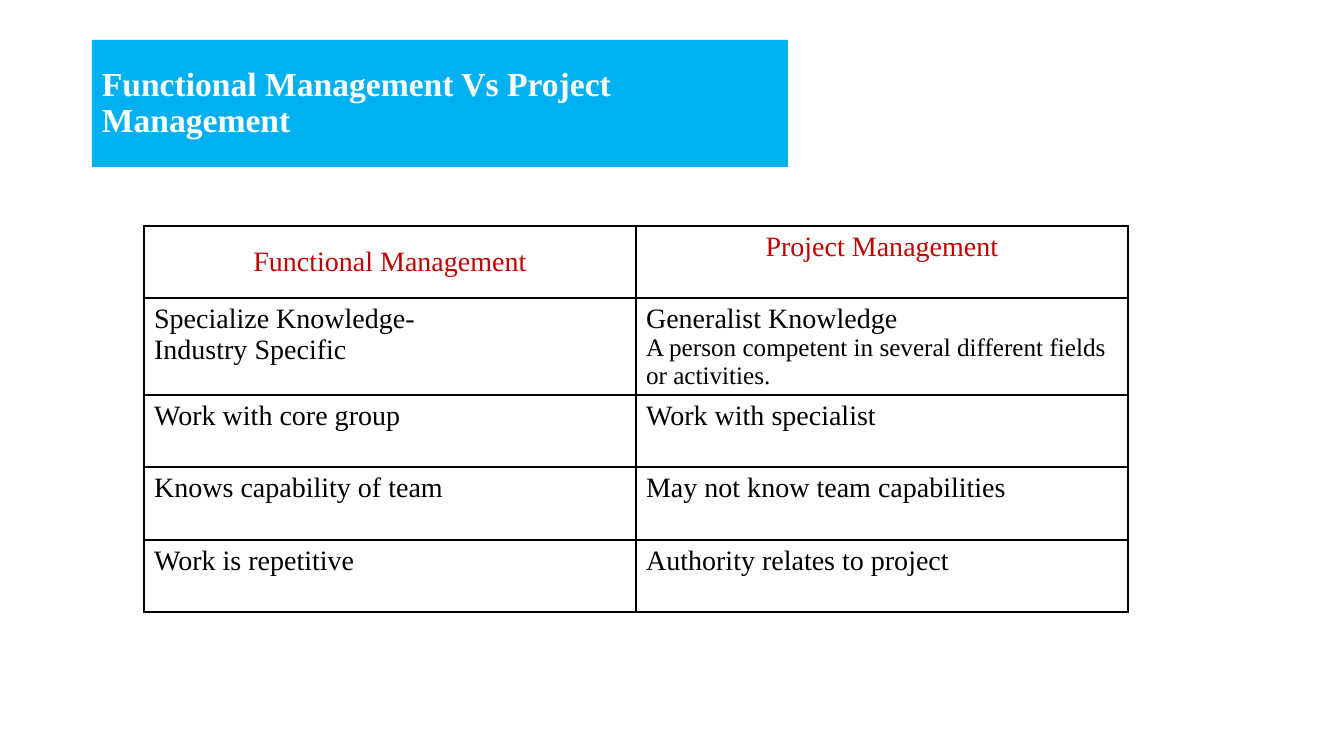
from lxml import etree
from pptx import Presentation
from pptx import util as u
from pptx.dml.color import RGBColor
from pptx.enum import shapes, text
from pptx.oxml.ns import qn

# Content: each cell is a list of (line, point size)
TITLE = "Functional Management Vs Project Management"
HEADERS = [("Functional Management", text.MSO_ANCHOR.MIDDLE),
           ("Project Management", text.MSO_ANCHOR.TOP)]
ROWS = [
    ([("Specialize Knowledge-", 20), ("Industry Specific", 20)],
     [("Generalist Knowledge", 20),
      ("A person competent in several different fields or activities.", 18)]),
    ([("Work with core group", 20)], [("Work with specialist", 20)]),
    ([("Knows capability of team", 20)], [("May not know team capabilities", 20)]),
    ([("Work is repetitive", 20)], [("Authority relates to project", 20)]),
]

# Geometry in px
SLIDE = (1344, 756)
TITLE_BOX = (92, 40, 696, 127)
TABLE_LEFT, TABLE_TOP, COLUMN_WIDTH = 144, 226, 492
ROW_HEIGHTS = [72, 97, 72, 73, 72]

FONT = "Times New Roman"
BLUE, RED, BLACK, WHITE = "00B0F0", "C00000", "000000", "FFFFFF"


def px(length):
    return u.Emu(round(length * 914400 / 100.8))


def color(value):
    return RGBColor.from_string(value)


def write(frame, lines, ink=BLACK, bold=False, align=text.PP_ALIGN.LEFT, spacing=None):
    frame.word_wrap = True
    for index, (line, size) in enumerate(lines):
        paragraph = frame.add_paragraph() if index else frame.paragraphs[0]
        paragraph.alignment = align
        paragraph.line_spacing = spacing
        run = paragraph.add_run()
        run.text = line
        run.font.name = FONT
        run.font.size = u.Pt(size)
        run.font.bold = bold
        run.font.color.rgb = color(ink)


def add_borders(cell):
    properties = cell._tc.get_or_add_tcPr()
    for position, side in enumerate(("lnL", "lnR", "lnT", "lnB")):
        line = etree.Element(qn(f"a:{side}"), w=str(u.Pt(1)))
        fill = etree.SubElement(line, qn("a:solidFill"))
        etree.SubElement(fill, qn("a:srgbClr"), val=BLACK)
        properties.insert(position, line)


def add_title(slide):
    shape = slide.shapes.add_shape(shapes.MSO_SHAPE.RECTANGLE, *map(px, TITLE_BOX))
    shape.shadow.inherit = False
    shape.fill.solid()
    shape.fill.fore_color.rgb = color(BLUE)
    shape.line.fill.background()
    shape.text_frame.vertical_anchor = text.MSO_ANCHOR.MIDDLE
    write(shape.text_frame, [(TITLE, 24)], ink=WHITE, bold=True, spacing=0.9)


def add_comparison(slide):
    table = slide.shapes.add_table(
        len(ROW_HEIGHTS), len(HEADERS), px(TABLE_LEFT), px(TABLE_TOP),
        px(COLUMN_WIDTH * len(HEADERS)), px(sum(ROW_HEIGHTS))).table
    table.first_row = table.horz_banding = False
    for column in table.columns:
        column.width = px(COLUMN_WIDTH)
    for row, height in zip(table.rows, ROW_HEIGHTS):
        row.height = px(height)
    for cell in table.iter_cells():
        cell.fill.solid()
        cell.fill.fore_color.rgb = color(WHITE)
        add_borders(cell)

    # Header row
    for index, (label, anchor) in enumerate(HEADERS):
        cell = table.cell(0, index)
        cell.vertical_anchor = anchor
        write(cell.text_frame, [(label, 20)], ink=RED, align=text.PP_ALIGN.CENTER)

    # Body rows
    for row_index, row in enumerate(ROWS, start=1):
        for column_index, lines in enumerate(row):
            write(table.cell(row_index, column_index).text_frame, lines)


def main():
    presentation = Presentation()
    presentation.slide_width, presentation.slide_height = map(px, SLIDE)
    slide = presentation.slides.add_slide(presentation.slide_layouts[6])
    add_title(slide)
    add_comparison(slide)
    presentation.save("out.pptx")


if __name__ == "__main__":
    main()
